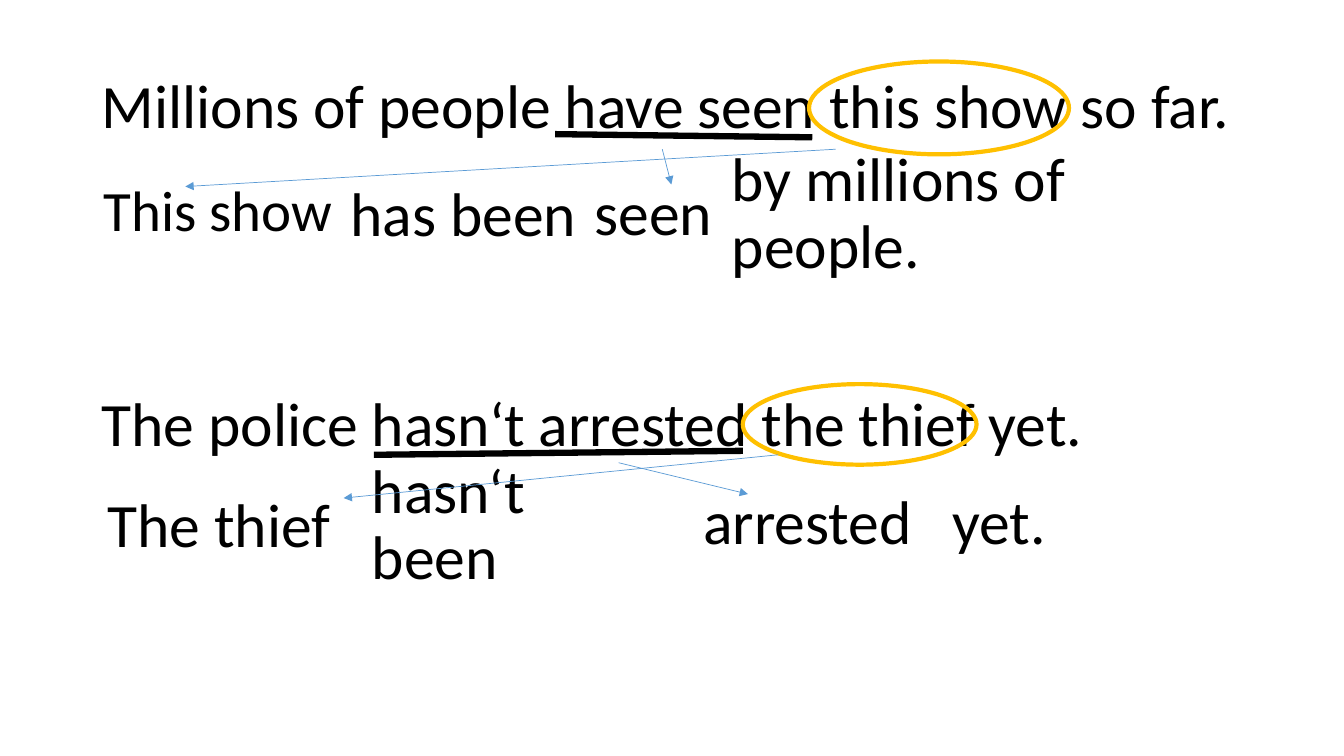
from lxml import etree
from pptx import Presentation
from pptx import util as u
from pptx.dml.color import RGBColor
from pptx.enum import shapes, text
from pptx.oxml import ns

BLACK = RGBColor(0x00, 0x00, 0x00)
GOLD = RGBColor(0xFF, 0xC0, 0x00)
BLUE = RGBColor(0x5B, 0x9B, 0xD5)
FONT = "Calibri"
SENTENCE_WIDTH, SENTENCE_HEIGHT = 29.21, 3.68
PHRASE_HEIGHT = 3.12
SECTION_LEFT = 2.31

SHOW = {
    "top": 0.89,
    "active": "Millions of people have seen this show so far.",
    "passive": [
        ("This show", 0.05, 2.92, 6.5, 40.7),
        ("has been", 6.27, 3.0, 6.6, 44),
        ("seen", 12.42, 2.97, 5.94, 44),
        ("by millions of people.", 15.88, 2.97, 13.84, 44),
    ],
    "object": (18.08, 0.66, 6.55, 2.34),
    "verb": (11.68, 2.49, 18.16, 2.57),
    "moves": [(18.75, 2.87, 2.36, 3.81), (14.38, 2.87, 14.61, 3.76)],
}
THIEF = {
    "top": 8.92,
    "active": "The police hasn‘t arrested the thief yet.",
    "passive": [
        ("The thief", 0.15, 2.82, 6.96, 44),
        ("hasn‘t been", 6.81, 2.79, 7.75, 44),
        ("arrested", 15.16, 2.74, 6.2, 44),
        ("yet.", 21.44, 2.74, 8.43, 44),
    ],
    "object": (16.41, 0.76, 5.89, 2.03),
    "verb": (7.11, 2.54, 16.41, 2.44),
    "moves": [(17.3, 2.54, 6.35, 3.63), (13.28, 2.74, 16.54, 3.53)],
}


def add_words(slide, words, left, top, width, height, size=44):
    """Place left-aligned words, vertically centred in their box."""
    box = slide.shapes.add_textbox(u.Cm(left), u.Cm(top), u.Cm(width), u.Cm(height))
    frame = box.text_frame
    frame.word_wrap = True
    frame.vertical_anchor = text.MSO_ANCHOR.MIDDLE
    frame.text = words
    paragraph = frame.paragraphs[0]
    paragraph.line_spacing = 0.9
    font = paragraph.runs[0].font
    font.name, font.size = FONT, u.Pt(size)
    font.color.rgb = BLACK


def add_stroke(slide, left, top, ends, color, weight, arrow=False):
    """Draw a straight stroke whose ends are relative to the section corner."""
    x1, y1, x2, y2 = ends
    stroke = slide.shapes.add_connector(
        shapes.MSO_CONNECTOR.STRAIGHT,
        u.Cm(left + x1), u.Cm(top + y1), u.Cm(left + x2), u.Cm(top + y2),
    )
    stroke.line.color.rgb = color
    stroke.line.width = u.Pt(weight)
    if arrow:
        line = stroke.line._get_or_add_ln()
        etree.SubElement(line, ns.qn("a:tailEnd"), type="triangle")
    etree.SubElement(stroke._element.spPr, ns.qn("a:effectLst"))


def add_object_ring(slide, left, top, width, height):
    """Circle the object of the active sentence."""
    ring = slide.shapes.add_shape(
        shapes.MSO_SHAPE.OVAL, u.Cm(left), u.Cm(top), u.Cm(width), u.Cm(height)
    )
    ring.shadow.inherit = False
    ring.fill.background()
    ring.line.color.rgb = GOLD
    ring.line.width = u.Pt(3)


def add_example(slide, example, left, top):
    """Show an active sentence with its passive form beneath it."""
    add_words(slide, example["active"], left, top, SENTENCE_WIDTH, SENTENCE_HEIGHT)
    for phrase, x, y, width, size in example["passive"]:
        add_words(slide, phrase, left + x, top + y, width, PHRASE_HEIGHT, size)
    x, y, width, height = example["object"]
    add_object_ring(slide, left + x, top + y, width, height)
    add_stroke(slide, left, top, example["verb"], BLACK, 4.5)
    for move in example["moves"]:
        add_stroke(slide, left, top, move, BLUE, 0.5, arrow=True)


def main():
    """Build the slide of active and passive sentences."""
    deck = Presentation()
    deck.slide_width, deck.slide_height = u.Cm(33.87), u.Cm(19.05)
    slide = deck.slides.add_slide(deck.slide_layouts[6])
    for example in (SHOW, THIEF):
        add_example(slide, example, SECTION_LEFT, example["top"])
    deck.save("out.pptx")


if __name__ == "__main__":
    main()
